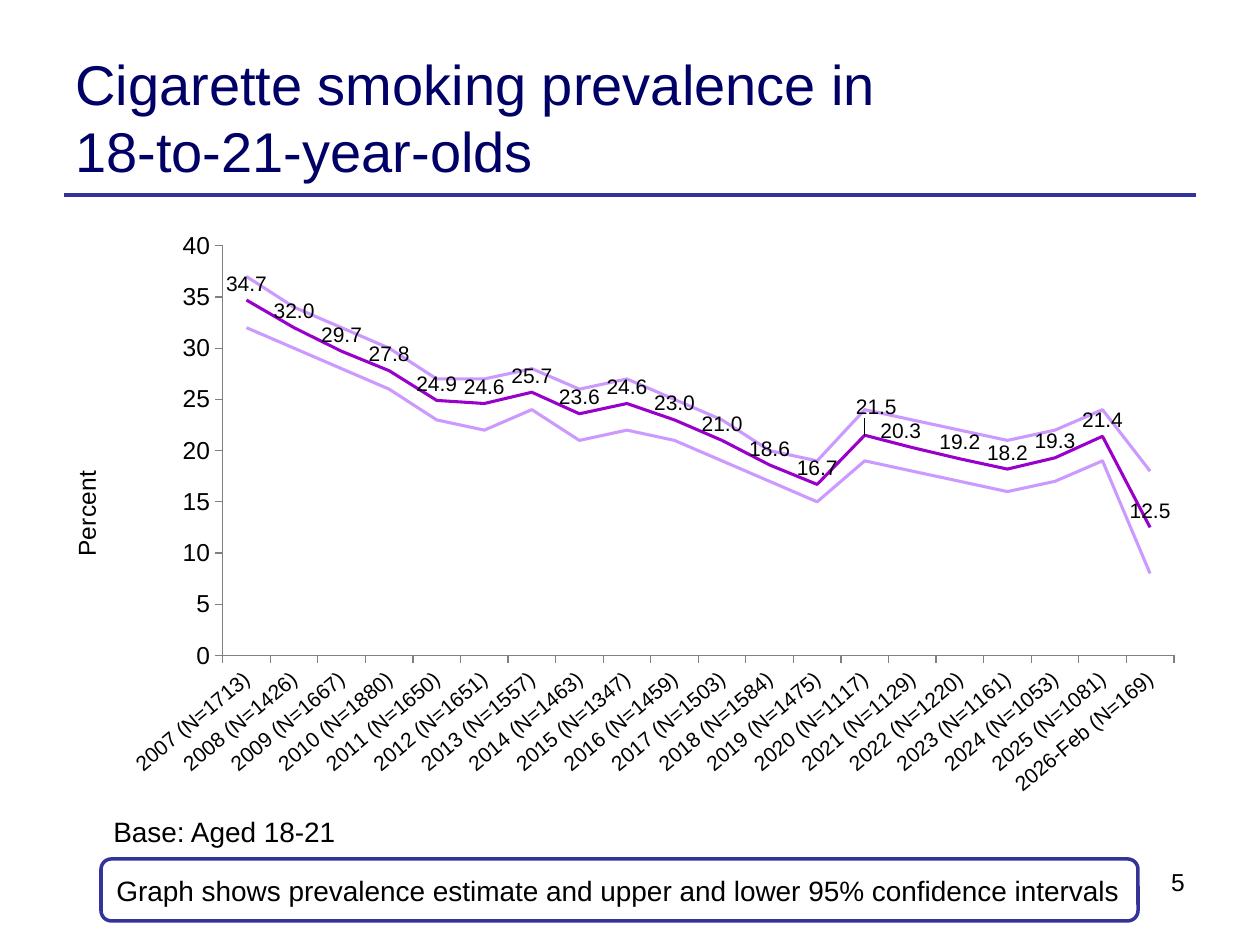
from lxml.etree import SubElement
from pptx import Presentation
from pptx.chart.data import CategoryChartData
from pptx.dml.color import RGBColor
from pptx.enum.chart import XL_CHART_TYPE as ChartType
from pptx.enum.chart import XL_LABEL_POSITION as LabelPosition
from pptx.enum.chart import XL_TICK_MARK as TickMark
from pptx.enum.shapes import MSO_CONNECTOR as Connector
from pptx.enum.shapes import MSO_SHAPE as Shape
from pptx.enum.text import MSO_ANCHOR as Anchor
from pptx.enum.text import PP_ALIGN as Align
from pptx.oxml import parse_xml
from pptx.oxml.ns import nsdecls, qn
from pptx.util import Pt

PX = 914400 / 126
FONT = "Arial"
COLORS = {
    "title": "000066",
    "rule": "333399",
    "text": "000000",
    "paper": "FFFFFF",
    "axis": "808080",
    "estimate": "9900CC",
    "interval": "CC99FF",
}
SAMPLES = [1713, 1426, 1667, 1880, 1650, 1651, 1557, 1463, 1347, 1459,
           1503, 1584, 1475, 1117, 1129, 1220, 1161, 1053, 1081, 169]
ESTIMATE = [34.7, 32, 29.7, 27.8, 24.9, 24.6, 25.7, 23.6, 24.6, 23,
            21, 18.6, 16.7, 21.5, 20.3, 19.2, 18.2, 19.3, 21.4, 12.5]
UPPER = [37, 34, 32, 30, 27, 27, 28, 26, 27, 25, 23, 20, 19, 24, 23, 22, 21, 22, 24, 18]
LOWER = [32, 30, 28, 26, 23, 22, 24, 21, 22, 21, 19, 17, 15, 19, 18, 17, 16, 17, 19, 8]
LABEL_SHIFTS = {13: (0.01, -0.02), 14: (-0.01, 0)}


def emu(*lengths):
    return [round(length * PX) for length in lengths]


def color(name):
    return RGBColor.from_string(COLORS[name])


def set_font(font, size, name="text"):
    font.name = FONT
    font.size = Pt(size)
    font.bold = False
    font.color.rgb = color(name)


def write(shape, text, size, name="text", align=Align.LEFT, anchor=Anchor.TOP, wrap=True):
    frame = shape.text_frame
    frame.word_wrap = wrap
    frame.vertical_anchor = anchor
    frame.text = text
    paragraph = frame.paragraphs[0]
    paragraph.alignment = align
    set_font(paragraph.font, size, name)


def add_text(slide, box, text, size, **style):
    write(slide.shapes.add_textbox(*emu(*box)), text, size, **style)


def add_header(slide, left, top, width, height):
    add_text(slide, (left, top, 994, height), "Cigarette smoking prevalence in \v18-to-21-year-olds",
             32, name="title", anchor=Anchor.MIDDLE)
    bottom = top + height
    rule = slide.shapes.add_connector(
        Connector.STRAIGHT, *emu(left + 1, bottom, left + width, bottom))
    rule.line.color.rgb = color("rule")
    rule.line.width = Pt(2.25)
    SubElement(rule._element.spPr, qn("a:effectLst"))


def manual_layout(x, y, width=None, height=None):
    parts = []
    if width:
        parts.append('<c:layoutTarget val="inner"/>')
        parts.append('<c:xMode val="edge"/><c:yMode val="edge"/>')
    parts.append(f'<c:x val="{x}"/><c:y val="{y}"/>')
    if width:
        parts.append(f'<c:w val="{width}"/><c:h val="{height}"/>')
    return parse_xml(f'<c:layout {nsdecls("c")}><c:manualLayout>{"".join(parts)}'
                     '</c:manualLayout></c:layout>')


def style_axis(axis, size):
    axis.has_major_gridlines = False
    axis.major_tick_mark = TickMark.OUTSIDE
    axis.minor_tick_mark = TickMark.NONE
    axis.format.line.color.rgb = color("axis")
    axis.format.line.width = Pt(0.75)
    set_font(axis.tick_labels.font, size)


def label_estimates(series):
    labels = series.data_labels
    labels.show_value = True
    labels.position = LabelPosition.ABOVE
    labels.number_format = "#,##0.0"
    labels.number_format_is_linked = False
    set_font(labels.font, 12)
    for index, shift in LABEL_SHIFTS.items():
        label = series.points[index].data_label
        set_font(label.font, 12)
        label.position = LabelPosition.ABOVE
    for element in series._element.iter(qn("c:dLbl")):
        index = element.find(qn("c:idx"))
        index.addnext(manual_layout(*LABEL_SHIFTS[int(index.get("val"))]))


def add_prevalence_chart(slide, left, top, width, height):
    data = CategoryChartData(number_format="0.0")
    years = [str(year) for year in range(2007, 2026)] + ["2026-Feb"]
    data.categories = [f"{year} (N={sample})" for year, sample in zip(years, SAMPLES)]
    for number, values in enumerate((ESTIMATE, UPPER, LOWER), 1):
        data.add_series(f"Series {number}", values)
    chart = slide.shapes.add_chart(
        ChartType.LINE, *emu(left, top, width, height), data).chart
    set_font(chart.font, 18)
    chart.has_legend = False
    chart.has_title = False

    plot = chart.plots[0]
    plot.vary_by_categories = False
    for series, name in zip(plot.series, ("estimate", "interval", "interval")):
        series.smooth = False
        series.format.line.color.rgb = color(name)
        series.format.line.width = Pt(1.75)
    label_estimates(plot.series[0])

    style_axis(chart.category_axis, 12)
    labels_body = chart.category_axis._element.find(qn("c:txPr")).find(qn("a:bodyPr"))
    labels_body.set("rot", "-2400000")
    value_axis = chart.value_axis
    style_axis(value_axis, 14)
    value_axis.minimum_scale = 0
    value_axis.maximum_scale = 40
    value_axis.major_unit = 5
    value_axis.tick_labels.number_format = "0"
    value_axis.tick_labels.number_format_is_linked = False
    frame = value_axis.axis_title.text_frame
    frame.text = "Percent"
    set_font(frame.paragraphs[0].font, 14)

    plot_area = chart._chartSpace.chart.plotArea
    for layout in plot_area.findall(qn("c:layout")):
        plot_area.remove(layout)
    plot_area.insert(0, manual_layout(
        round(179 / width, 3), round(26 / height, 3),
        round(951 / width, 3), round(410 / height, 3)))


def add_footer(slide, left, top, width, height):
    add_text(slide, (left, top, 249, 47), "Base: Aged 18-21", 16, wrap=False)
    note_top = top + 51
    note = slide.shapes.add_shape(
        Shape.ROUNDED_RECTANGLE, *emu(left, note_top, 1037, height - 51))
    note.shadow.inherit = False
    note.fill.solid()
    note.fill.fore_color.rgb = color("paper")
    note.line.color.rgb = color("rule")
    note.line.width = Pt(2)
    write(note, "Graph shows prevalence estimate and upper and lower 95% confidence intervals",
          16, anchor=Anchor.MIDDLE)
    add_text(slide, (left + width - 349, note_top + 2, 349, 65), "5", 14, align=Align.RIGHT)


def main():
    presentation = Presentation()
    presentation.slide_width, presentation.slide_height = emu(1260, 945)
    slide = presentation.slides.add_slide(presentation.slide_layouts[6])
    add_header(slide, 63, 38, 1133, 157)
    add_prevalence_chart(slide, 44, 220, 1153, 587)
    add_footer(slide, 101, 808, 1096, 113)
    presentation.save("out.pptx")


if __name__ == "__main__":
    main()
